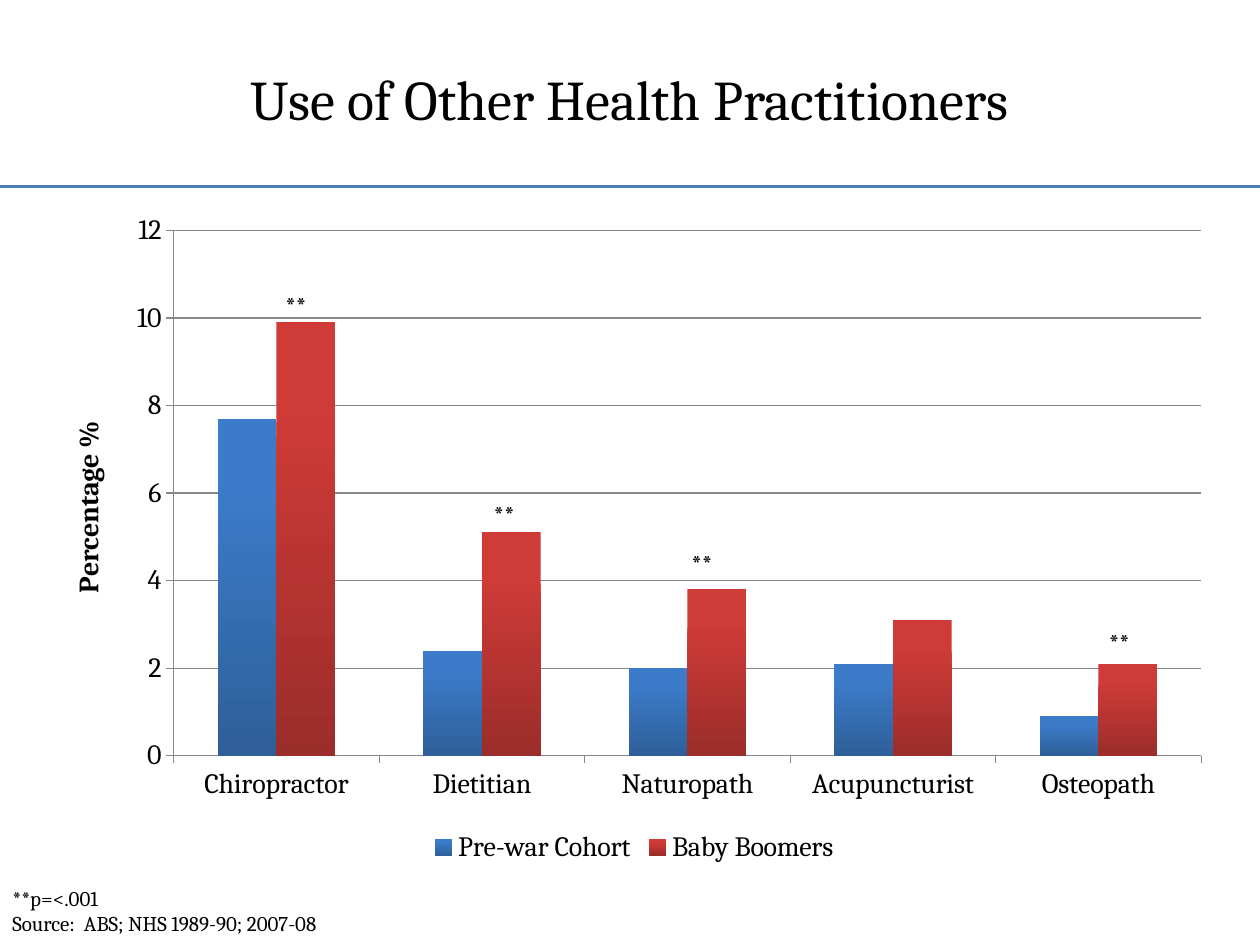
from dataclasses import dataclass

from lxml.etree import SubElement
from pptx import Presentation
from pptx.chart.data import CategoryChartData as Data
from pptx.dml.color import RGBColor as RGB
from pptx.enum.chart import XL_CHART_TYPE as Kind, XL_LEGEND_POSITION as Spot
from pptx.enum.chart import XL_TICK_MARK as Tick
from pptx.enum.shapes import MSO_CONNECTOR as Link
from pptx.enum.text import MSO_ANCHOR as Anchor, PP_ALIGN as Align
from pptx.oxml import parse_xml
from pptx.oxml.ns import nsdecls, qn
from pptx.util import Pt


@dataclass(frozen=True)
class Theme:
    face: str = "Cambria"
    ink: str = "000000"
    rule: str = "4A7EBB"
    grid: str = "878787"
    bars: tuple = (("3C7BC9", "2E5F99"), ("CF3B37", "9B2D2A"))
    head: int = 32
    axis: int = 16
    star: int = 14
    note: int = 12


def style(font, theme, size, bold=False):
    font.name, font.size, font.bold = theme.face, Pt(size), bold
    font.color.rgb = RGB.from_string(theme.ink)


def write(frame, text, theme, size, bold=False, align=Align.LEFT, anchor=Anchor.TOP):
    """Fill a text frame, one paragraph for each line of text."""
    frame.word_wrap = True
    frame.vertical_anchor = anchor
    for i, line in enumerate(text.split("\n")):
        para = frame.add_paragraph() if i else frame.paragraphs[0]
        para.alignment = align
        run = para.add_run()
        run.text = line
        style(run.font, theme, size, bold)


class Page:
    """Holds the theme and the slide being built."""

    def __init__(self, deck, theme):
        self.theme = theme
        self.slide = deck.slides.add_slide(deck.slide_layouts[5])
        self.shapes = self.slide.shapes

    def title(self, text, x, y, w, h):
        box = self.shapes.title
        box.left, box.top, box.width, box.height = map(Pt, (x, y, w, h))
        write(box.text_frame, text, self.theme, self.theme.head,
              align=Align.CENTER, anchor=Anchor.MIDDLE)

    def rule(self, x, y, w):
        line = self.shapes.add_connector(Link.STRAIGHT, Pt(x), Pt(y), Pt(x + w), Pt(y))
        line.line.color.rgb = RGB.from_string(self.theme.rule)
        line.line.width = Pt(1.5)
        SubElement(line._element.spPr, qn("a:effectLst"))

    def text(self, text, x, y, w, h, size):
        box = self.shapes.add_textbox(Pt(x), Pt(y), Pt(w), Pt(h))
        write(box.text_frame, text, self.theme, size)

    def chart(self, names, series, unit, x, y, w, h, plot):
        data = Data(number_format="0.0")
        data.categories = names
        for name, vals in series.items():
            data.add_series(name, vals)
        chart = self.shapes.add_chart(
            Kind.COLUMN_CLUSTERED, Pt(x), Pt(y), Pt(w), Pt(h), data).chart
        style(chart.font, self.theme, self.theme.axis)
        chart.has_title = False
        chart.has_legend = True
        chart.legend.position = Spot.BOTTOM
        chart.legend.include_in_layout = False
        style(chart.legend.font, self.theme, self.theme.axis)
        self.axes(chart, unit)
        bars = chart.plots[0]
        bars.gap_width, bars.overlap, bars.vary_by_categories = 75, 0, False
        bars.gap_width = 150
        for ser, tones in zip(bars.series, self.theme.bars):
            self.shade(ser.format.fill, tones)
        self.place(chart, plot)

    def axes(self, chart, unit):
        grey = RGB.from_string(self.theme.grid)
        val, cat = chart.value_axis, chart.category_axis
        val.minimum_scale, val.maximum_scale, val.major_unit = 0, 12, 2
        val.tick_labels.number_format = "0"
        val.tick_labels.number_format_is_linked = False
        val.has_major_gridlines = True
        write(val.axis_title.text_frame, unit, self.theme, self.theme.axis,
              bold=True, align=Align.CENTER)
        for axis in (val, cat):
            axis.major_tick_mark = Tick.OUTSIDE
            style(axis.tick_labels.font, self.theme, self.theme.axis)
        for part in (val, cat, val.major_gridlines):
            part.format.line.color.rgb = grey
            part.format.line.width = Pt(0.75)

    def shade(self, fill, tones):
        """Shade a bar from its first tone, at the top, to its second."""
        fill.gradient()
        fill.gradient_angle = 270
        for stop, tone, spot in zip(fill.gradient_stops, tones, (0.2, 1)):
            stop.color.rgb = RGB.from_string(tone)
            stop.position = spot

    def place(self, chart, plot):
        """Fix the inner plot area, given as shares of the chart size."""
        area = chart._chartSpace.find(".//" + qn("c:plotArea"))
        old = area.find(qn("c:layout"))
        if old is not None:
            area.remove(old)
        modes = "".join(f'<c:{k}Mode val="edge"/>' for k in "xy")
        sizes = "".join(f'<c:{k} val="{v}"/>' for k, v in zip("xywh", plot))
        area.insert(0, parse_xml(
            f'<c:layout {nsdecls("c")}><c:manualLayout>'
            f'<c:layoutTarget val="inner"/>{modes}{sizes}'
            '</c:manualLayout></c:layout>'))


def main():
    deck = Presentation()
    deck.slide_width, deck.slide_height = Pt(720), Pt(540)
    theme = Theme()
    page = Page(deck, theme)
    page.title("Use of Other Health Practitioners", 36, 0, 648, 111.6)
    page.rule(0, 106.5, 720)
    page.chart(
        ["Chiropractor", "Dietitian", "Naturopath", "Acupuncturist", "Osteopath"],
        {"Pre-war Cohort": (7.7, 2.4, 2, 2.1, 0.9),
         "Baby Boomers": (9.9, 5.1, 3.8, 3.1, 2.1)},
        "Percentage %", 25, 116.5, 675, 380, plot=(0.11, 0.04, 0.87, 0.79))
    for x, y in ((156, 162), (275, 281.5), (388, 309.5), (626.5, 355)):
        page.text("**", x, y, 45, 24.5, theme.star)
    page.text("**p=<.001\nSource:  ABS; NHS 1989-90; 2007-08",
              0, 502.5, 258, 36, theme.note)
    deck.save("out.pptx")


if __name__ == "__main__":
    main()
